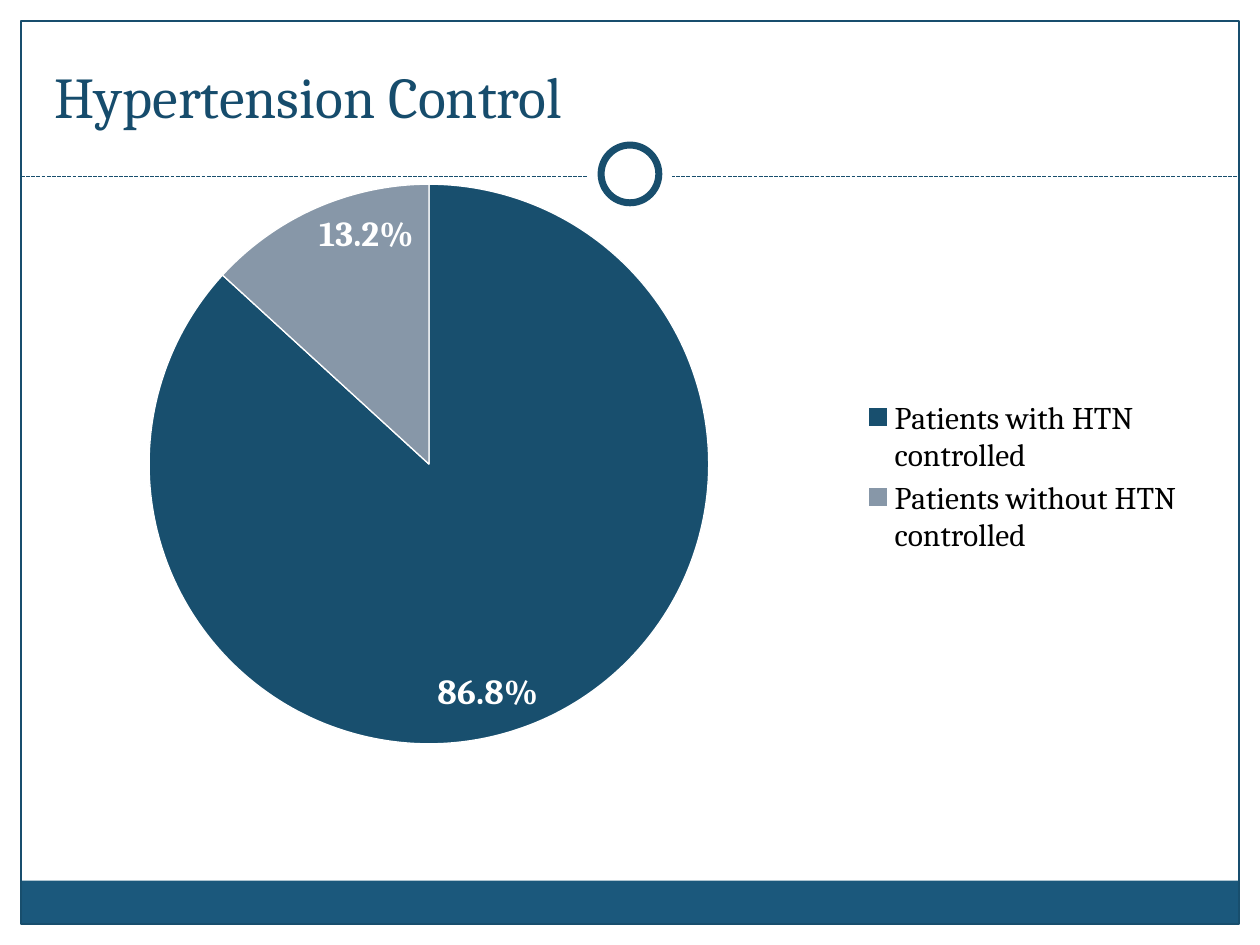
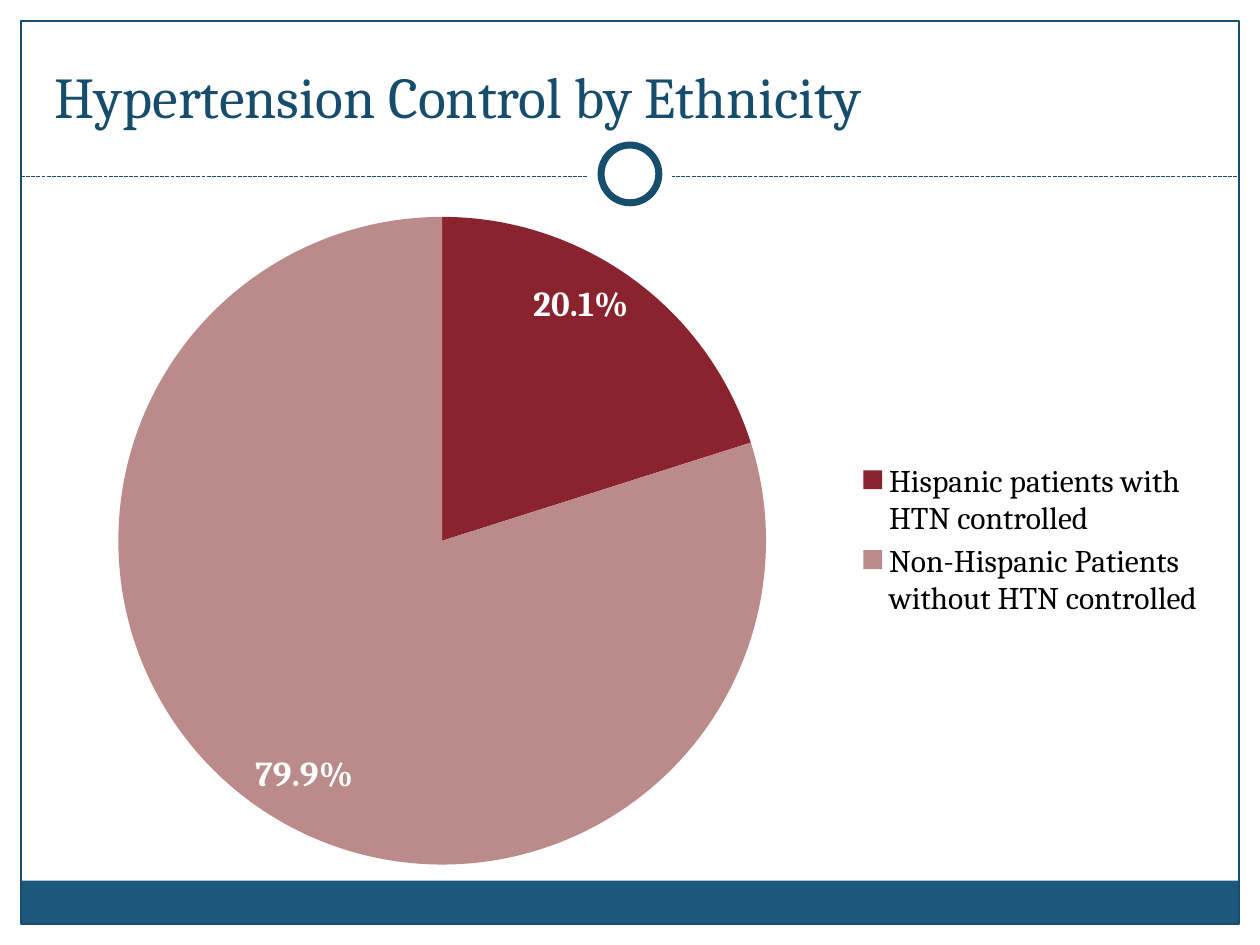
from dataclasses import dataclass

from lxml.etree import SubElement
from pptx import Presentation
from pptx.chart.data import CategoryChartData as ChartData
from pptx.dml.color import RGBColor as Color
from pptx.enum.chart import XL_CHART_TYPE as Kind
from pptx.enum.chart import XL_LABEL_POSITION as Spot
from pptx.enum.chart import XL_LEGEND_POSITION as Side
from pptx.enum.dml import MSO_LINE as Dash
from pptx.enum.shapes import MSO_CONNECTOR as Link
from pptx.enum.shapes import MSO_SHAPE as Form
from pptx.enum.text import MSO_ANCHOR as Anchor
from pptx.enum.text import MSO_AUTO_SIZE as Fit
from pptx.enum.text import PP_ALIGN as Align
from pptx.oxml.ns import qn
from pptx.util import Pt


@dataclass(frozen=True)
class Theme:
    """Colours, font and type sizes of the deck."""
    font: str = "Cambria"
    title: str = "164C6C"
    line: str = "184E6D"
    band: str = "1B587C"
    white: str = "FFFFFF"
    black: str = "000000"
    blues: tuple = ("184F6E", "8797A8")
    reds: tuple = ("8B232F", "BB8A8B")
    head: int = 33
    label: int = 20
    legend: int = 18


THEME = Theme()


def rgb(code):
    """Turn a hex code into a colour."""
    return Color.from_string(code)


def style(font, size, color, bold=False):
    """Set the face, size and colour of a font."""
    font.name, font.size, font.bold = THEME.font, Pt(size), bold
    font.color.rgb = rgb(color)


def paint(part, fill=None, line=None, width=0.75):
    """Set the fill and outline of a shape or chart point."""
    if fill:
        part.fill.solid()
        part.fill.fore_color.rgb = rgb(fill)
    else:
        part.fill.background()
    if line:
        part.line.color.rgb = rgb(line)
        part.line.width = Pt(width)
    else:
        part.line.fill.background()


def add_form(slide, form, box, **look):
    """Add a preset shape without shadow."""
    shape = slide.shapes.add_shape(form, *map(Pt, box))
    shape.shadow.inherit = False
    paint(shape, **look)


def add_ring(slide, size, **look):
    """Add a circle centred on the header rule."""
    box = (360 - size / 2, 99.4 - size / 2, size, size)
    add_form(slide, Form.OVAL, box, **look)


def add_rule(slide):
    """Add the dashed rule below the title."""
    rule = slide.shapes.add_connector(
        Link.STRAIGHT, Pt(12), Pt(100.8), Pt(708), Pt(100.8))
    rule.line.color.rgb = rgb(THEME.line)
    rule.line.width = Pt(0.75)
    rule.line.dash_style = Dash.SQUARE_DOT
    SubElement(rule.element.spPr, qn("a:effectLst"))


def set_title(slide, text):
    """Place and format the slide title."""
    title = slide.shapes.title
    title.left, title.top = Pt(24), Pt(18)
    title.width, title.height = Pt(672), Pt(60)
    frame = title.text_frame
    frame.text = text
    frame.auto_size = Fit.NONE
    frame.vertical_anchor = Anchor.BOTTOM
    frame.paragraphs[0].alignment = Align.LEFT
    style(frame.paragraphs[0].runs[0].font, THEME.head, THEME.title)


def add_slide(deck, title):
    """Add a slide with the shared title, frame, band and ring."""
    slide = deck.slides.add_slide(deck.slide_layouts[5])
    set_title(slide, title)
    add_form(slide, Form.RECTANGLE, (11.8, 503.3, 695.6, 24.5), fill=THEME.band)
    add_form(slide, Form.RECTANGLE, (12, 12, 696, 516), line=THEME.line)
    add_rule(slide)
    add_ring(slide, 48, fill=THEME.white)
    add_ring(slide, 33, fill=THEME.white, line=THEME.line, width=4)
    return slide


def set_plot(chart, plot):
    """Fix the inner plot area as fractions of the chart."""
    area = chart.element.find(".//" + qn("c:plotArea"))
    layout = area.find(qn("c:layout"))
    if layout is None:
        layout = SubElement(area, qn("c:layout"))
        area.insert(0, layout)
    manual = SubElement(layout, qn("c:manualLayout"))
    tags = ("layoutTarget", "xMode", "yMode", "x", "y", "w", "h")
    for tag, val in zip(tags, ("inner", "edge", "edge", *plot)):
        SubElement(manual, qn("c:" + tag)).set("val", str(val))


def add_pie(slide, box, data, colors, edge=None, plot=None):
    """Add a pie chart with a legend and percent labels."""
    source = ChartData(number_format="0.0%")
    source.categories = list(data)
    source.add_series("Series 1", list(data.values()))
    chart = slide.shapes.add_chart(Kind.PIE, *map(Pt, box), source).chart
    style(chart.font, THEME.legend, THEME.black)
    chart.has_title = False
    chart.has_legend = True
    chart.legend.position = Side.RIGHT
    chart.legend.include_in_layout = False
    pie = chart.plots[0]
    pie.vary_by_categories = True
    for spot, color in enumerate(colors):
        paint(pie.series[0].points[spot].format, color, edge)
    pie.has_data_labels = True
    labels = pie.data_labels
    labels.show_value = True
    labels.show_percentage = False
    labels.number_format = "0.0%"
    labels.number_format_is_linked = False
    labels.position = Spot.INSIDE_END
    style(labels.font, THEME.label, THEME.white, bold=True)
    if plot:
        set_plot(chart, plot)


def main():
    """Build both slides and save the deck."""
    deck = Presentation()
    deck.slide_width, deck.slide_height = Pt(720), Pt(540)

    slide = add_slide(deck, "Hypertension Control")
    data = {"Patients with HTN controlled": 0.868,
            "Patients without HTN controlled": 0.132}
    add_pie(slide, (24, 78, 660, 390), data, THEME.blues,
            edge=THEME.white, plot=(0.06, 0.07, 0.55, 0.82))

    slide = add_slide(deck, "Hypertension Control by Ethnicity")
    data = {"Hispanic patients with HTN controlled": 0.201,
            "Non-Hispanic Patients without HTN controlled": 0.799}
    add_pie(slide, (18, 114, 678, 390), data, THEME.reds)

    deck.save("out.pptx")


if __name__ == "__main__":
    main()
